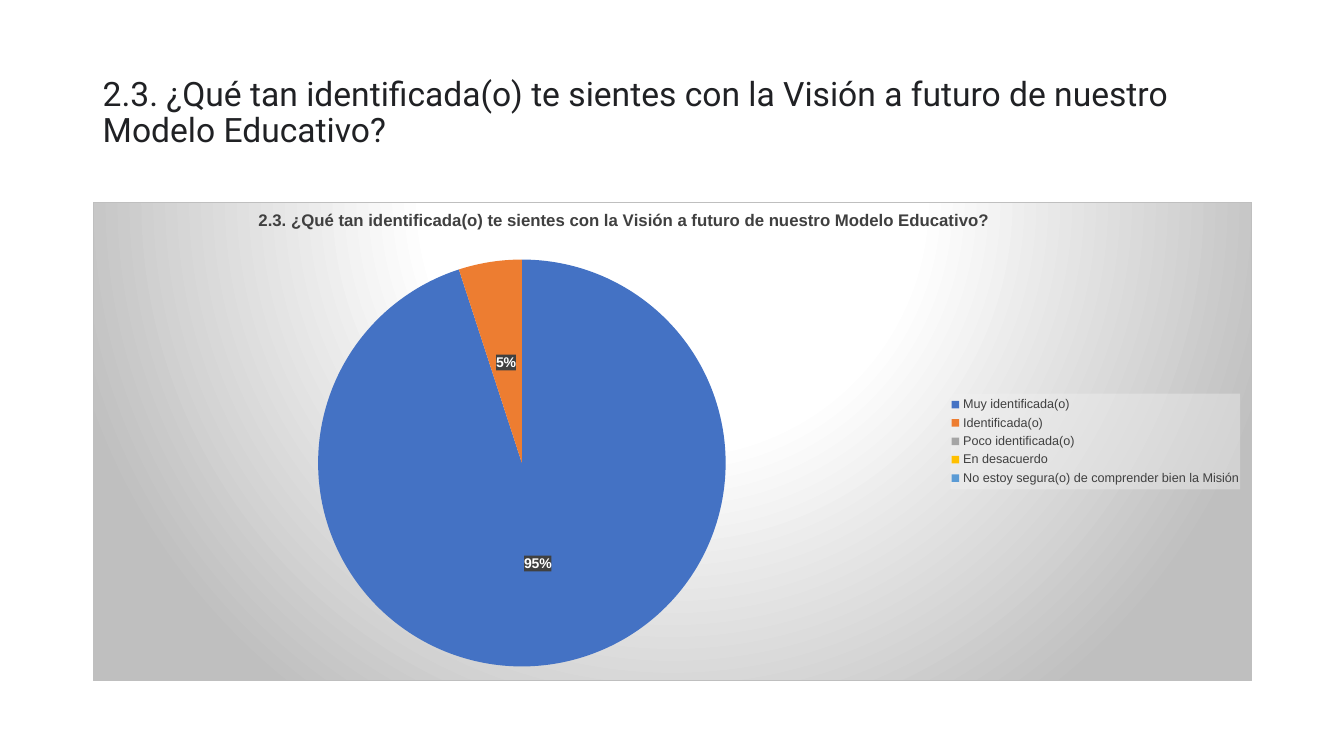
from pptx import Presentation
from pptx.chart.data import CategoryChartData
from pptx.dml.color import RGBColor as RGB
from pptx.enum.chart import XL_CHART_TYPE as ChartType
from pptx.enum.chart import XL_LABEL_POSITION as LabelPos
from pptx.enum.chart import XL_LEGEND_POSITION as LegendPos
from pptx.enum.text import MSO_ANCHOR as Anchor
from pptx.oxml import parse_xml
from pptx.oxml.ns import nsdecls, qn
from pptx.util import Inches, Pt

INK = RGB(0x20, 0x21, 0x24)
BLACK = RGB(0, 0, 0)
WHITE = RGB(0xFF, 0xFF, 0xFF)
GREY = RGB(0xBF, 0xBF, 0xBF)
DARK = RGB(0x40, 0x40, 0x40)
PALE = RGB(0xF2, 0xF2, 0xF2)
SLICES = [RGB(0x44, 0x72, 0xC4), RGB(0xED, 0x7D, 0x31), RGB(0xA5, 0xA5, 0xA5),
          RGB(0xFF, 0xC0, 0x00), RGB(0x5B, 0x9B, 0xD5)]

QUESTION = ("2.3. ¿Qué tan identificada(o) te sientes con la Visión a futuro "
            "de nuestro Modelo Educativo?")
ANSWERS = {
    "Muy identificada(o)": 95,
    "Identificada(o)": 5,
    "Poco identificada(o)": 0,
    "En desacuerdo": 0,
    "No estoy segura(o) de comprender bien la Misión": 0,
}


def set_font(font, color, **values):
    for name, value in values.items():
        setattr(font, name, value)
    font.color.rgb = color


def solid(color, alpha):
    """Shape properties with a translucent fill, alpha in percent."""
    return parse_xml(
        f'<c:spPr {nsdecls("c", "a")}><a:solidFill><a:srgbClr val="{color}">'
        f'<a:alpha val="{alpha * 1000}"/></a:srgbClr></a:solidFill></c:spPr>')


def radial_background():
    stops = "".join(
        f'<a:gs pos="{pos * 1000}"><a:srgbClr val="{color}"/></a:gs>'
        for pos, color in ((0, WHITE), (39, WHITE), (100, GREY)))
    return parse_xml(
        f'<c:spPr {nsdecls("c", "a")}><a:gradFill><a:gsLst>{stops}</a:gsLst>'
        '<a:path path="circle"><a:fillToRect l="50000" t="-80000" r="50000" '
        f'b="180000"/></a:path></a:gradFill><a:ln w="{Pt(0.75)}"><a:solidFill>'
        f'<a:srgbClr val="{GREY}"/></a:solidFill></a:ln></c:spPr>')


def place(el, index, inner=False, **box):
    """Give a chart part a manual layout, in fractions of the chart."""
    for old in el.findall(qn("c:layout")):
        el.remove(old)
    target = '<c:layoutTarget val="inner"/>' if inner else ""
    modes = "".join(f'<c:{k}Mode val="edge"/>' for k in "xy")
    sizes = "".join(f'<c:{k} val="{v}"/>' for k, v in box.items())
    el.insert(index, parse_xml(
        f'<c:layout {nsdecls("c")}><c:manualLayout>{target}{modes}{sizes}'
        '</c:manualLayout></c:layout>'))


def add_heading(slide, text):
    box = slide.shapes.add_textbox(Inches(0.92), Inches(0.4), Inches(11.5), Inches(1.45))
    tf = box.text_frame
    tf.word_wrap = True
    tf.vertical_anchor = Anchor.MIDDLE
    p = tf.paragraphs[0]
    p.line_spacing = 0.9
    r = p.add_run()
    r.text = text
    set_font(r.font, INK, name="Roboto", size=Pt(24))


def style_title(chart):
    tf = chart.chart_title.text_frame
    r = tf.paragraphs[0].add_run()
    r.text = QUESTION
    set_font(r.font, DARK, name="Arial", size=Pt(12), bold=True)
    place(chart.chart_title._element, 1, x=0.14, y=0.01)


def style_legend(chart):
    chart.has_legend = True
    legend = chart.legend
    legend.position = LegendPos.RIGHT
    legend.include_in_layout = False
    set_font(legend.font, DARK, name="Arial", size=Pt(9))
    el = legend._element
    place(el, 1, x=0.74, y=0.4, w=0.25, h=0.2)
    el.find(qn("c:overlay")).addnext(solid(PALE, 39))


def style_labels(series):
    labels = series.data_labels
    for name, value in {"show_percentage": True, "show_value": False,
                        "number_format": "0%", "number_format_is_linked": False,
                        "position": LabelPos.CENTER}.items():
        setattr(labels, name, value)
    set_font(labels.font, WHITE, name="Arial", size=Pt(10), bold=True)
    el = labels._element
    el.find(qn("c:numFmt")).addnext(solid(DARK, 75))
    # Empty slices carry no label
    empty = [i for i, value in enumerate(series.values) if not value]
    for pos, i in enumerate(empty):
        el.insert(pos, parse_xml(f'<c:dLbl {nsdecls("c")}><c:idx val="{i}"/>'
                                 '<c:delete val="1"/></c:dLbl>'))


def add_answer_pie(slide):
    data = CategoryChartData()
    data.categories = list(ANSWERS)
    data.add_series("Series 1", list(ANSWERS.values()))
    chart = slide.shapes.add_chart(ChartType.PIE, Inches(0.92), Inches(2), Inches(11.5),
                                   Inches(4.76), data).chart
    set_font(chart.font, BLACK, name="Arial", size=Pt(10))
    chart.plots[0].vary_by_categories = True
    series = chart.plots[0].series[0]
    for i, color in enumerate(SLICES):
        fill = series.points[i].format.fill
        fill.solid()
        fill.fore_color.rgb = color
    style_title(chart)
    style_legend(chart)
    style_labels(series)
    # Pie area and chart background
    root = chart._chartSpace.find(qn("c:chart"))
    place(root.find(qn("c:plotArea")), 0, inner=True, x=0.19, y=0.12, w=0.36, h=0.85)
    root.addnext(radial_background())


def main():
    prs = Presentation()
    prs.slide_width, prs.slide_height = Inches(13.33), Inches(7.5)
    slide = prs.slides.add_slide(prs.slide_layouts[6])
    add_heading(slide, QUESTION)
    add_answer_pie(slide)
    prs.save("out.pptx")


if __name__ == "__main__":
    main()
